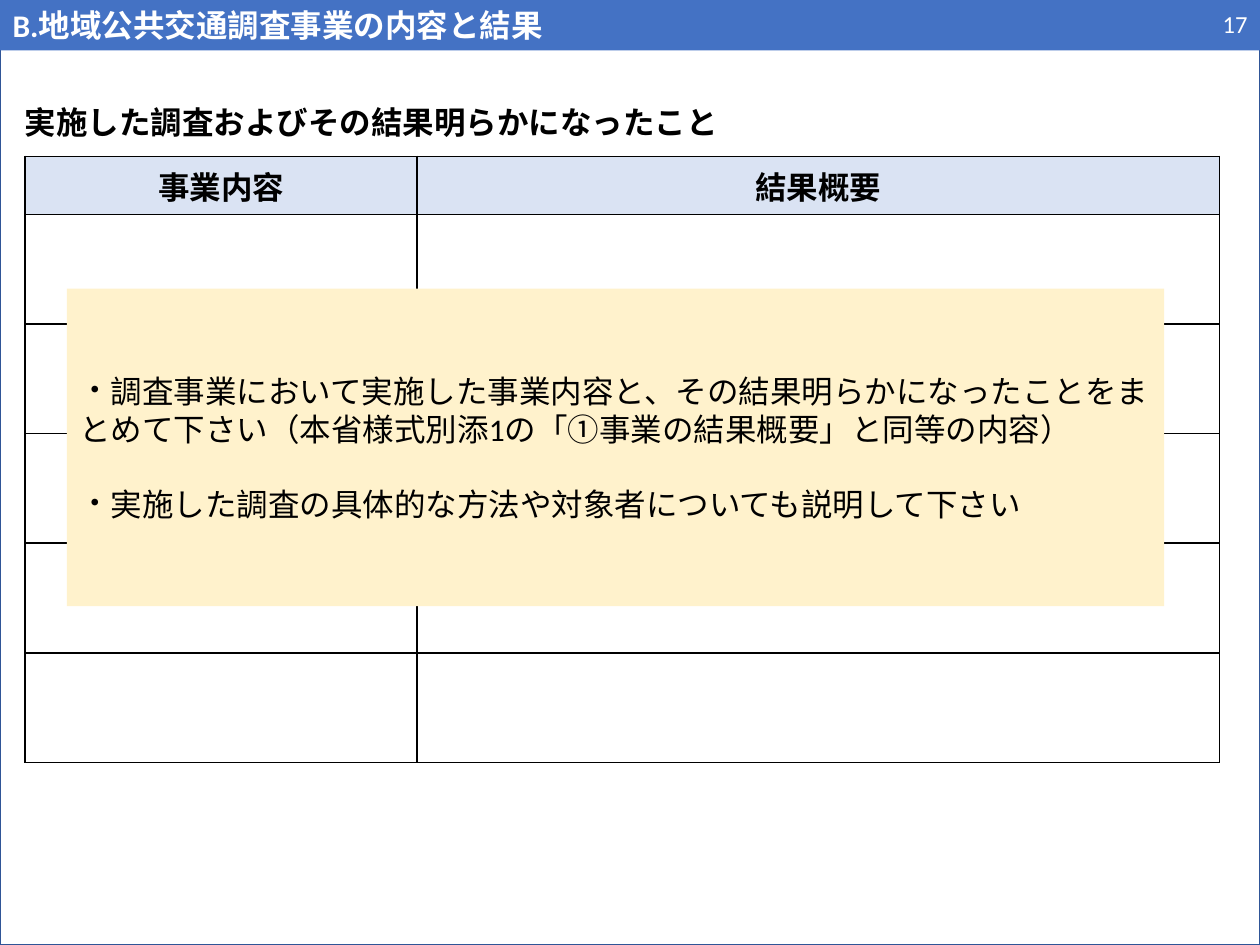
from dataclasses import dataclass

from lxml import etree
from pptx import Presentation
from pptx.dml.color import RGBColor
from pptx.enum.shapes import MSO_SHAPE
from pptx.enum.text import MSO_ANCHOR, MSO_AUTO_SIZE, PP_ALIGN
from pptx.oxml.ns import qn
from pptx.util import Inches, Pt

RECTANGLE = MSO_SHAPE.RECTANGLE
MIDDLE = MSO_ANCHOR.MIDDLE
TOP = MSO_ANCHOR.TOP
NO_AUTOFIT = MSO_AUTO_SIZE.NONE
LEFT, CENTER, RIGHT = PP_ALIGN.LEFT, PP_ALIGN.CENTER, PP_ALIGN.RIGHT

SLIDE_WIDTH, SLIDE_HEIGHT = 10, 7.5
BAR_HEIGHT = 0.4
COLUMN_WIDTHS = (3.11, 6.37)
HEADER_HEIGHT, ROW_HEIGHT, BODY_ROWS = 0.37, 0.87, 5
HEADERS = ("事業内容", "結果概要")
GUIDANCE = (
    "調査事業において実施した事業内容と、その結果明らかになったことをまとめて下さい"
    "（本省様式別添1の「①事業の結果概要」と同等の内容）",
    "実施した調査の具体的な方法や対象者についても説明して下さい",
)


@dataclass(frozen=True)
class Theme:
    font: str = "Calibri"
    text_size: float = 18
    number_size: float = 14
    paragraph_gap: float = 21.5
    line_width: float = 1
    black: str = "000000"
    white: str = "FFFFFF"
    bar: str = "4472C4"
    frame: str = "2F5597"
    header: str = "DAE3F3"
    guidance: str = "FFF2CC"


THEME = Theme()


def color(value):
    return RGBColor.from_string(value)


def paint(fill, value):
    fill.solid()
    fill.fore_color.rgb = color(value)


def place(shape, left, top, width, height):
    shape.left, shape.top = Inches(left), Inches(top)
    shape.width, shape.height = Inches(width), Inches(height)


def format_text(text_frame, size, text_color, bold=False, alignment=LEFT):
    for paragraph in text_frame.paragraphs:
        paragraph.alignment = alignment
        for run in paragraph.runs:
            run.font.name = THEME.font
            run.font.size = Pt(size)
            run.font.bold = bold
            run.font.color.rgb = color(text_color)


def add_frame(slide):
    frame = slide.shapes.add_shape(
        RECTANGLE, 0, 0, Inches(SLIDE_WIDTH), Inches(SLIDE_HEIGHT)
    )
    frame.shadow.inherit = False
    frame.fill.background()
    frame.line.color.rgb = color(THEME.frame)
    frame.line.width = Pt(THEME.line_width)
    return frame


def fill_title(slide, text):
    title = slide.shapes.title
    place(title, 0, 0, SLIDE_WIDTH, BAR_HEIGHT)
    paint(title.fill, THEME.bar)
    title.text_frame.text = text
    title.text_frame.auto_size = NO_AUTOFIT
    title.text_frame.vertical_anchor = MIDDLE
    format_text(title.text_frame, THEME.text_size, THEME.white, bold=True)
    return title


def add_label(slide, text, box, size, text_color, bold=False, alignment=LEFT, anchor=TOP):
    label = slide.shapes.add_textbox(*(Inches(length) for length in box))
    label.text_frame.word_wrap = True
    label.text_frame.vertical_anchor = anchor
    label.text_frame.text = text
    format_text(label.text_frame, size, text_color, bold, alignment)


def add_borders(cell):
    properties = cell._tc.get_or_add_tcPr()
    for index, side in enumerate(("lnL", "lnR", "lnT", "lnB")):
        line = etree.Element(qn(f"a:{side}"), w=str(Pt(THEME.line_width)))
        solid = etree.SubElement(line, qn("a:solidFill"))
        etree.SubElement(solid, qn("a:srgbClr"), val=THEME.black)
        properties.insert(index, line)


def add_results_table(slide, left, top):
    row_heights = (HEADER_HEIGHT,) + (ROW_HEIGHT,) * BODY_ROWS
    table = slide.shapes.add_table(
        len(row_heights), len(COLUMN_WIDTHS), Inches(left), Inches(top),
        Inches(sum(COLUMN_WIDTHS)), Inches(sum(row_heights)),
    ).table
    table.horz_banding = False
    for column, width in zip(table.columns, COLUMN_WIDTHS):
        column.width = Inches(width)
    for row, height in zip(table.rows, row_heights):
        row.height = Inches(height)
    for cell in table.iter_cells():
        cell.fill.background()
        add_borders(cell)
    for cell, header in zip(table.rows[0].cells, HEADERS):
        paint(cell.fill, THEME.header)
        cell.text_frame.text = header
        format_text(cell.text_frame, THEME.text_size, THEME.black, True, CENTER)


def add_bullet(paragraph):
    properties = paragraph._p.get_or_add_pPr()
    properties.set("marL", "0")
    properties.set("indent", "0")
    etree.SubElement(properties, qn("a:buFont"), typeface=THEME.font)
    etree.SubElement(properties, qn("a:buChar"), char="・")


def fill_guidance(slide, items, box):
    guidance = slide.placeholders[1]
    place(guidance, *box)
    paint(guidance.fill, THEME.guidance)
    text_frame = guidance.text_frame
    text_frame.text = "\n".join(items)
    text_frame.auto_size = NO_AUTOFIT
    text_frame.vertical_anchor = MIDDLE
    format_text(text_frame, THEME.text_size, THEME.black)
    for index, paragraph in enumerate(text_frame.paragraphs):
        paragraph.space_before = Pt(THEME.paragraph_gap if index else 0)
        add_bullet(paragraph)
    return guidance


def main():
    presentation = Presentation()
    presentation.slide_width = Inches(SLIDE_WIDTH)
    presentation.slide_height = Inches(SLIDE_HEIGHT)
    slide = presentation.slides.add_slide(presentation.slide_layouts[1])

    frame = add_frame(slide)
    title = fill_title(slide, "B.地域公共交通調査事業の内容と結果")
    frame._element.addnext(title._element)
    add_results_table(slide, 0.2, 1.24)
    add_label(
        slide, "実施した調査およびその結果明らかになったこと",
        (0.1, 0.77, 9.9, 0.4), THEME.text_size, THEME.black, bold=True,
    )
    guidance = fill_guidance(slide, GUIDANCE, (0.53, 2.29, 8.71, 2.52))
    slide.shapes[-1]._element.addnext(guidance._element)
    add_label(
        slide, "17", (8.82, 0, 1.18, 0.37), THEME.number_size, THEME.white,
        alignment=RIGHT, anchor=MIDDLE,
    )
    presentation.save("out.pptx")


if __name__ == "__main__":
    main()
